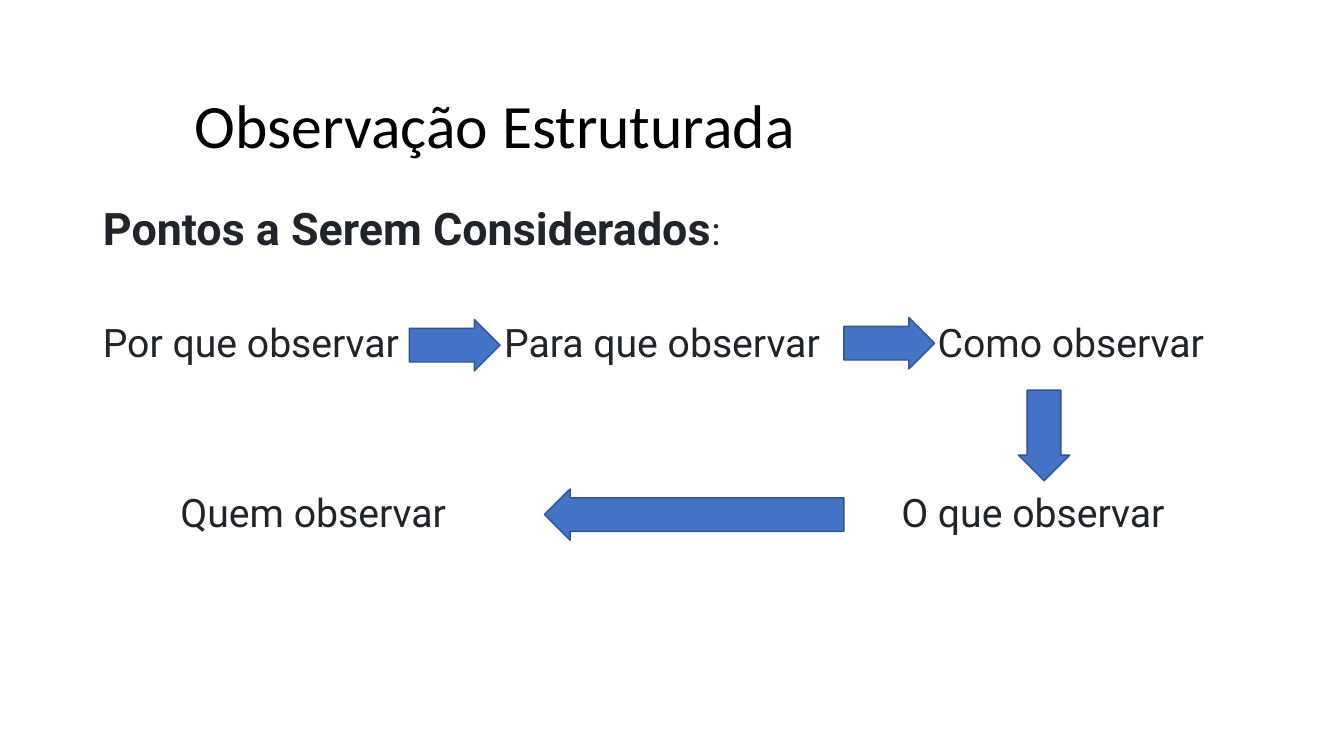
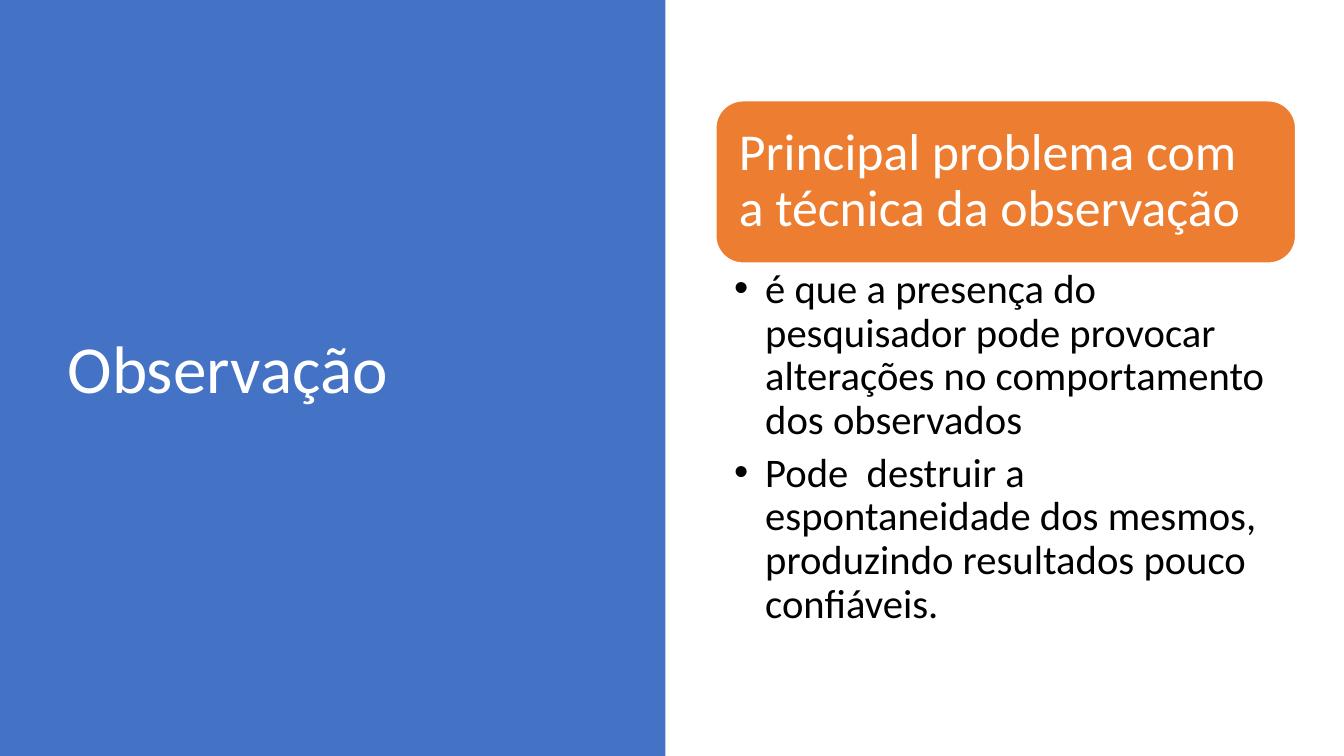
"""Build two slides on structured observation and its main problem."""
import pptx
import pptx.dml.color
import pptx.enum.shapes
import pptx.enum.text
import pptx.oxml
import pptx.oxml.ns
import pptx.util

RGB = pptx.dml.color.RGBColor
Inches, Pt = pptx.util.Inches, pptx.util.Pt
SHAPE = pptx.enum.shapes.MSO_SHAPE
ANCHOR = pptx.enum.text.MSO_ANCHOR
LEFT = pptx.enum.text.PP_ALIGN.LEFT

BLUE = RGB(0x44, 0x72, 0xC4)
EDGE = RGB(0x32, 0x54, 0x91)
ORANGE = RGB(0xED, 0x7D, 0x31)
INK = RGB(0x21, 0x25, 0x29)
BLACK = RGB(0, 0, 0)
WHITE = RGB(255, 255, 255)
NS = pptx.oxml.ns.nsdecls("a")

WIDTH, HEIGHT = 13.33, 7.5
ARROW_LENGTH, ARROW_BREADTH = 0.9, 0.51
ROW_TOPS = (3.21, 4.9)
STEP_SIZE = (3.3, 0.45)

STEP = dict(size=Pt(28), name="Roboto", color=INK)
HEADING = STEP | dict(size=Pt(32), bold=True)
PROBLEM = dict(size=Pt(37), name="Calibri", color=WHITE)
BULLET = dict(size=Pt(29), name="Calibri", color=BLACK)

POINTS = [("Pontos a Serem Considerados", HEADING), (":", STEP)]
STEPS = [
    ("Por que observar", 1.02, 0),
    ("Para que observar", 5, 0),
    ("Como observar", 9.3, 0),
    ("O que observar", 8.94, 1),
    ("Quem observar", 1.79, 1),
]
ARROWS = [
    (SHAPE.RIGHT_ARROW, (4.06, 3.17, ARROW_LENGTH, ARROW_BREADTH)),
    (SHAPE.RIGHT_ARROW, (8.37, 3.15, ARROW_LENGTH, ARROW_BREADTH)),
    (SHAPE.DOWN_ARROW, (10.1, 3.87, ARROW_BREADTH, ARROW_LENGTH)),
    (SHAPE.LEFT_ARROW, (5.4, 4.85, 2.97, ARROW_BREADTH)),
]
PROBLEM_TITLE = "Principal problema com a técnica da observação"
EFFECTS = [
    "é que a presença do pesquisador pode provocar alterações no comportamento dos observados",
    "Pode  destruir a espontaneidade dos mesmos, produzindo resultados pouco confiáveis.",
]


def place(sp, box):
    for side, value in zip(("left", "top", "width", "height"), box):
        setattr(sp, side, Inches(value))


def set_frame(tf, insets, anchor):
    tf.word_wrap = True
    tf.auto_size = pptx.enum.text.MSO_AUTO_SIZE.NONE
    tf.vertical_anchor = anchor
    for side, value in zip(("left", "top", "right", "bottom"), insets):
        setattr(tf, f"margin_{side}", Inches(value))


def write(tf, index, runs, after=0, hanging=0):
    p = tf.paragraphs[0] if index == 0 else tf.add_paragraph()
    layout = dict(alignment=LEFT, line_spacing=0.9, space_before=Pt(0), space_after=Pt(after))
    for key, value in layout.items():
        setattr(p, key, value)
    pPr = p._p.get_or_add_pPr()
    pPr.set("marL", str(Inches(hanging)))
    pPr.set("indent", str(-Inches(hanging)))
    bullet = '<a:buChar {} char="•"/>' if hanging else "<a:buNone {}/>"
    pPr.append(pptx.oxml.parse_xml(bullet.format(NS)))
    for text, style in runs:
        r = p.add_run()
        r.text = text
        for key, value in style.items():
            if key == "color":
                r.font.color.rgb = value
            else:
                setattr(r.font, key, value)


def add_block(slide, kind, box, fill, line=None):
    sp = slide.shapes.add_shape(kind, *map(Inches, box))
    sp.shadow.inherit = False
    sp.fill.solid()
    sp.fill.fore_color.rgb = fill
    if line is None:
        sp.line.fill.background()
    else:
        sp.line.color.rgb = line
        sp.line.width = Pt(1)
    return sp


def add_slide(prs, title, title_box, size, color, body_box, insets):
    slide = prs.slides.add_slide(prs.slide_layouts[1])
    body = slide.placeholders[1]
    place(slide.shapes.title, title_box)
    place(body, body_box)
    set_frame(slide.shapes.title.text_frame, (0.1, 0.05, 0.1, 0.05), ANCHOR.MIDDLE)
    set_frame(body.text_frame, insets, ANCHOR.TOP)
    style = dict(size=Pt(size), name="Calibri", color=color)
    write(slide.shapes.title.text_frame, 0, [(title, style)])
    return slide, body.text_frame


def build_points(prs):
    slide, tf = add_slide(prs, "Observação Estruturada", (1.83, 0.55, 11.5, 1.45), 44, BLACK,
                          (0.92, 2, 11.5, 0.7), (0.1, 0.05, 0.1, 0.05))
    write(tf, 0, POINTS)
    for text, left, row in STEPS:
        box = (left, ROW_TOPS[row], *STEP_SIZE)
        label = slide.shapes.add_textbox(*map(Inches, box))
        set_frame(label.text_frame, (0, 0, 0, 0), ANCHOR.TOP)
        write(label.text_frame, 0, [(text, STEP)])
    for kind, box in ARROWS:
        sp = add_block(slide, kind, box, BLUE, EDGE)
        sp.adjustments[0] = 0.655
        sp.adjustments[1] = 0.5


def build_problem(prs):
    left, top, width, height = 7.1, 1, 5.75, 1.61
    slide, tf = add_slide(prs, "Observação", (0.57, 0.68, 5.67, 6.02), 48, WHITE,
                          (left, top + height, width, 3.77), (0.18, 0.05, 0.29, 0.05))
    panel = add_block(slide, SHAPE.RECTANGLE, (0, 0, 6.6, HEIGHT), BLUE)
    slide.shapes.title.element.addprevious(panel.element)
    card = add_block(slide, SHAPE.ROUNDED_RECTANGLE, (left, top, width, height), ORANGE, WHITE)
    set_frame(card.text_frame, (0.15, 0.15, 0.15, 0.15), ANCHOR.MIDDLE)
    write(card.text_frame, 0, [(PROBLEM_TITLE, PROBLEM)])
    for i, text in enumerate(EFFECTS):
        write(tf, i, [(text, BULLET)], after=6, hanging=0.31)


def main():
    prs = pptx.Presentation()
    prs.slide_width, prs.slide_height = Inches(WIDTH), Inches(HEIGHT)
    build_points(prs)
    build_problem(prs)
    prs.save("out.pptx")


if __name__ == "__main__":
    main()
